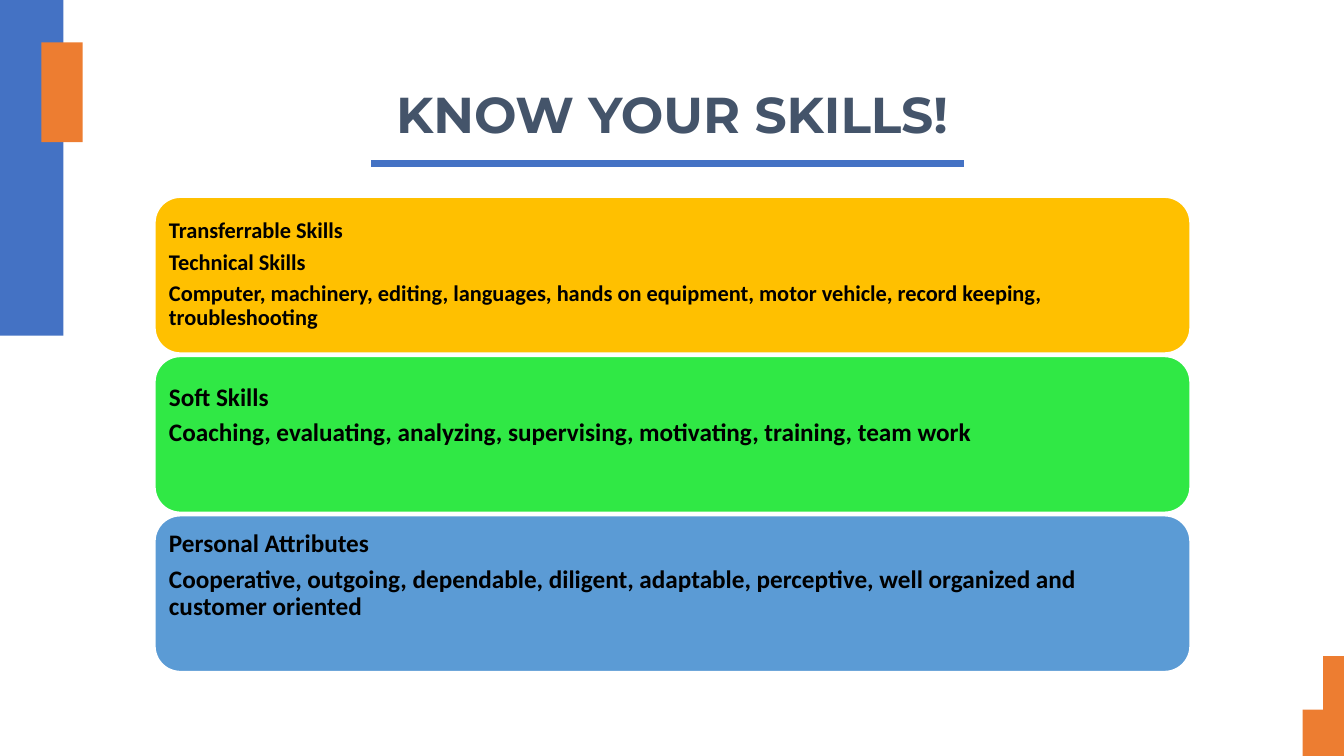
from dataclasses import dataclass

import lxml.etree
import pptx
import pptx.dml.color
import pptx.enum.shapes
import pptx.enum.text
import pptx.oxml.ns
import pptx.shapes.autoshape
import pptx.slide
import pptx.util

RGBColor = pptx.dml.color.RGBColor
Shape = pptx.enum.shapes.MSO_SHAPE
Anchor = pptx.enum.text.MSO_ANCHOR
Align = pptx.enum.text.PP_ALIGN

PX = 9144  # EMU, one hundredth of an inch

BLUE = RGBColor(0x44, 0x72, 0xC4)
ORANGE = RGBColor(0xED, 0x7D, 0x31)
WHITE = RGBColor(0xFF, 0xFF, 0xFF)
BLACK = RGBColor(0x00, 0x00, 0x00)
SLATE = RGBColor(0x44, 0x54, 0x6A)
GOLD = RGBColor(0xFF, 0xC0, 0x00)
GREEN = RGBColor(0x30, 0xE8, 0x45)
SKY = RGBColor(0x5B, 0x9B, 0xD5)

CARD_LEFT, CARD_TOP, CARD_WIDTH, CARD_HEIGHT = 153, 195, 1028, 156
CARD_PITCH = 158
CARD_INSET = 7


@dataclass(frozen=True)
class Box:
    left: int
    top: int
    width: int
    height: int
    fill: RGBColor


@dataclass(frozen=True)
class SkillCard:
    fill: RGBColor
    font_size: int
    space_after: float
    top_inset: int
    lines: tuple[str, ...]


DECORATIONS = (
    Box(0, 0, 63, 333, BLUE),
    Box(41, 42, 41, 99, ORANGE),
    Box(1292, 651, 41, 99, ORANGE),
    Box(1271, 391, 41, 313, WHITE),
)

CARDS = (
    SkillCard(GOLD, 16, 5.3, 15, (
        "Transferrable Skills",
        "Technical Skills",
        "Computer, machinery, editing, languages, hands on equipment, "
        "motor vehicle, record keeping, troubleshooting",
    )),
    SkillCard(GREEN, 18, 5.9, 21, (
        "Soft Skills",
        "Coaching, evaluating, analyzing, supervising, motivating, training, team work",
    )),
    SkillCard(SKY, 18, 5.9, 8, (
        "Personal Attributes",
        "Cooperative, outgoing, dependable, diligent, adaptable, perceptive, "
        "well organized and customer oriented",
    )),
)


def add_box(slide: pptx.slide.Slide, box: Box,
            kind: Shape = Shape.RECTANGLE) -> pptx.shapes.autoshape.Shape:
    shape = slide.shapes.add_shape(
        kind, box.left * PX, box.top * PX, box.width * PX, box.height * PX)
    shape.shadow.inherit = False
    shape.fill.solid()
    shape.fill.fore_color.rgb = box.fill
    shape.line.fill.background()
    return shape


def add_title(slide: pptx.slide.Slide) -> None:
    title = slide.shapes.add_textbox(104 * PX, 84 * PX, 1125 * PX, 56 * PX)
    frame = title.text_frame
    frame.word_wrap = True
    frame.vertical_anchor = Anchor.MIDDLE
    frame.margin_left = frame.margin_right = 13 * PX
    frame.margin_top = frame.margin_bottom = 13 * PX
    frame.text = "KNOW YOUR SKILLS!"
    paragraph = frame.paragraphs[0]
    paragraph.alignment = Align.CENTER
    font = paragraph.runs[0].font
    font.name, font.size, font.bold = "Montserrat", pptx.util.Pt(36), True
    font.color.rgb = SLATE


def add_title_rule(slide: pptx.slide.Slide) -> None:
    rule = slide.shapes.add_connector(
        pptx.enum.shapes.MSO_CONNECTOR.STRAIGHT,
        368 * PX, 162 * PX, 956 * PX, 162 * PX)
    rule.line.color.rgb = BLUE
    rule.line.width = pptx.util.Pt(5.25)
    properties = rule._element.spPr
    lxml.etree.SubElement(properties, pptx.oxml.ns.qn("a:effectLst"))


def add_card(slide: pptx.slide.Slide, card: SkillCard, row: int) -> None:
    box = Box(CARD_LEFT, CARD_TOP + row * CARD_PITCH, CARD_WIDTH, CARD_HEIGHT, card.fill)
    shape = add_box(slide, box, Shape.ROUNDED_RECTANGLE)
    shape.line.color.rgb = WHITE
    shape.line.width = pptx.util.Pt(2)

    frame = shape.text_frame
    frame.word_wrap = True
    frame.vertical_anchor = Anchor.TOP
    frame.margin_left = frame.margin_right = CARD_INSET * PX
    frame.margin_top, frame.margin_bottom = card.top_inset * PX, 0
    frame.text = "\n".join(card.lines)
    for paragraph in frame.paragraphs:
        paragraph.alignment = Align.LEFT
        paragraph.line_spacing = 0.9
        paragraph.space_after = pptx.util.Pt(card.space_after)
        font = paragraph.runs[0].font
        font.name, font.size, font.bold = "Calibri", pptx.util.Pt(card.font_size), True
        font.color.rgb = BLACK


def main() -> None:
    presentation = pptx.Presentation()
    presentation.slide_width = 1333 * PX
    presentation.slide_height = 750 * PX
    slide = presentation.slides.add_slide(presentation.slide_layouts[6])

    for decoration in DECORATIONS:
        add_box(slide, decoration)
    add_title(slide)
    add_title_rule(slide)
    for row, card in enumerate(CARDS):
        add_card(slide, card, row)

    presentation.save("out.pptx")


if __name__ == "__main__":
    main()
